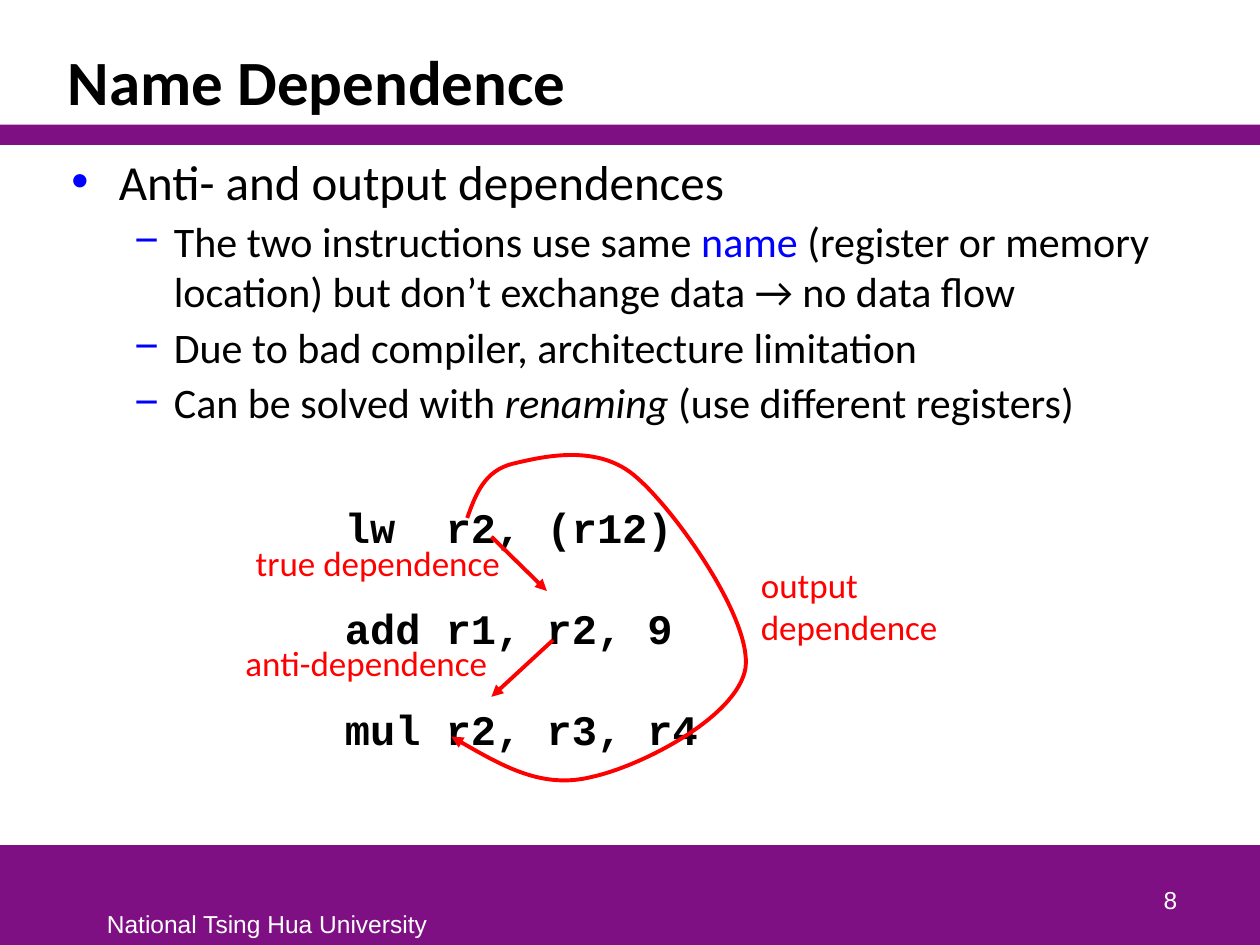
from lxml import etree
from pptx import Presentation
from pptx import util as u
from pptx.dml.color import RGBColor
from pptx.enum import shapes, text
from pptx.oxml import ns

PURPLE = RGBColor(0x7F, 0x10, 0x84)
RED = RGBColor(0xFF, 0, 0)
BLUE = RGBColor(0, 0, 0xFF)
BLACK = RGBColor(0, 0, 0)
WHITE = RGBColor(0xFF, 0xFF, 0xFF)
BODY, CODE, FOOT = "Calibri", "Courier New", "Arial"


class Deck:
    def __init__(self, width, height):
        self.prs = Presentation()
        self.prs.slide_width, self.prs.slide_height = u.Pt(width), u.Pt(height)
        self.s = self.prs.slides.add_slide(self.prs.slide_layouts[6])

    def bar(self, x, y, w, h, color):
        sp = self.s.shapes.add_shape(
            shapes.MSO_SHAPE.RECTANGLE, u.Pt(x), u.Pt(y), u.Pt(w), u.Pt(h))
        sp.shadow.inherit = False
        sp.fill.solid()
        sp.fill.fore_color.rgb = color
        sp.line.fill.background()

    def box(self, x, y, w, h, wrap=True, anchor=text.MSO_ANCHOR.TOP):
        sp = self.s.shapes.add_textbox(u.Pt(x), u.Pt(y), u.Pt(w), u.Pt(h))
        sp.text_frame.word_wrap = wrap
        sp.text_frame.vertical_anchor = anchor
        return sp

    def para(self, tf, first, before=0, spacing=None, align=None):
        p = tf.paragraphs[0] if first else tf.add_paragraph()
        p.space_before = u.Pt(0 if first else before)
        if spacing:
            p.line_spacing = spacing
        if align:
            p.alignment = align
        return p

    def run(self, p, words, size, font=BODY, color=BLACK, bold=False, italic=False):
        r = p.add_run()
        r.text = words
        r.font.size, r.font.name = u.Pt(size), font
        r.font.bold, r.font.italic = bold, italic
        r.font.color.rgb = color

    def bullet(self, p, char, left, hang):
        pPr = p._p.get_or_add_pPr()
        pPr.set("marL", str(u.Pt(left)))
        pPr.set("indent", str(-u.Pt(hang)))
        clr = etree.SubElement(pPr, ns.qn("a:buClr"))
        etree.SubElement(clr, ns.qn("a:srgbClr"), val=str(BLUE))
        etree.SubElement(pPr, ns.qn("a:buFont"), typeface="Arial")
        etree.SubElement(pPr, ns.qn("a:buChar"), char=char)

    def label(self, x, y, w, h, *lines):
        p = self.para(self.box(x, y, w, h, wrap=False).text_frame, True)
        for i, line in enumerate(lines):
            if i:
                p.add_line_break()
            self.run(p, line, 20, color=RED)

    def stroke(self, sp, end):
        sp.line.color.rgb = RED
        sp.line.width = u.Pt(2.25)
        etree.SubElement(sp.line._get_or_add_ln(), ns.qn(end), type="triangle")

    def arrow(self, x1, y1, x2, y2):
        sp = self.s.shapes.add_connector(
            shapes.MSO_CONNECTOR.STRAIGHT, u.Pt(x1), u.Pt(y1), u.Pt(x2), u.Pt(y2))
        self.stroke(sp, "a:tailEnd")
        etree.SubElement(sp._element.spPr, ns.qn("a:effectLst"))

    def curve(self, start, points):
        fb = self.s.shapes.build_freeform(*start, scale=u.Pt(1))
        fb.add_line_segments(points, close=False)
        sp = fb.convert_to_shape()
        sp.shadow.inherit = False
        sp.fill.background()
        segments = list(sp._element.spPr.iter(ns.qn("a:lnTo")))
        for i in range(0, len(segments), 3):
            bez = etree.Element(ns.qn("a:cubicBezTo"))
            segments[i].addprevious(bez)
            for seg in segments[i:i + 3]:
                bez.append(seg[0])
                seg.getparent().remove(seg)
        self.stroke(sp, "a:headEnd")


def main():
    d = Deck(720, 540)
    d.bar(0, 483, 720, 57, PURPLE)
    d.bar(0, 71.3, 720, 11.5, PURPLE)

    tf = d.box(54, 516.2, 198.7, 23.8, wrap=False).text_frame
    d.run(d.para(tf, True), "National Tsing Hua University", 14, FOOT, WHITE)

    tf = d.box(31.7, 18, 645.8, 53.3, anchor=text.MSO_ANCHOR.BOTTOM).text_frame
    d.run(d.para(tf, True, spacing=0.85), "Name Dependence", 36, bold=True)

    tf = d.box(33.8, 82.8, 643.7, 391).text_frame
    p = d.para(tf, True)
    d.bullet(p, "•", 27, 27)
    d.run(p, "Anti- and output dependences", 28)
    points = [
        [("The two instructions use same ", {}), ("name", {"color": BLUE}),
         (" (register or memory location) but don’t exchange data → no data flow", {})],
        [("Due to bad compiler, architecture limitation", {})],
        [("Can be solved with ", {}), ("renaming", {"italic": True}),
         (" (use different registers)", {})],
    ]
    for point in points:
        p = d.para(tf, False, before=3)
        p.level = 1
        d.bullet(p, "−", 58.5, 22.5)
        for words, style in point:
            d.run(p, words, 24, **style)

    sp = d.box(190, 268.6, 240, 167)
    sp.fill.solid()
    sp.fill.fore_color.rgb = WHITE
    for i, line in enumerate(["lw  r2, (r12)", "add r1, r2, 9", "mul r2, r3, r4"]):
        p = d.para(sp.text_frame, i == 0, before=14.5, spacing=1.5)
        d.run(p, line, 24, CODE, bold=True)

    d.arrow(316, 365.8, 280.8, 398.2)
    d.curve((257.8, 421.2), [
        (283.7, 436.3), (309.6, 450.7), (337.7, 444.2),
        (365.8, 437.8), (421.2, 410.4), (425.5, 382.3),
        (429.8, 353.5), (385.9, 292.3), (363.6, 272.9),
        (342, 252.7), (309.6, 260.6), (293, 265),
        (277.2, 268.6), (272.2, 282.2), (267.1, 295.9)])
    d.arrow(280.8, 306.7, 312.5, 337.7)

    d.label(139, 306, 155.5, 31.5, "true dependence")
    d.label(133.2, 362.9, 154.1, 31.5, "anti-dependence")
    d.label(427.7, 318.2, 116.6, 55.7, "output", "dependence")

    tf = d.box(529.9, 490.3, 149.8, 36, anchor=text.MSO_ANCHOR.BOTTOM).text_frame
    p = d.para(tf, True, align=text.PP_ALIGN.RIGHT)
    d.run(p, "8", 14, FOOT, WHITE)

    d.prs.save("out.pptx")


if __name__ == "__main__":
    main()
